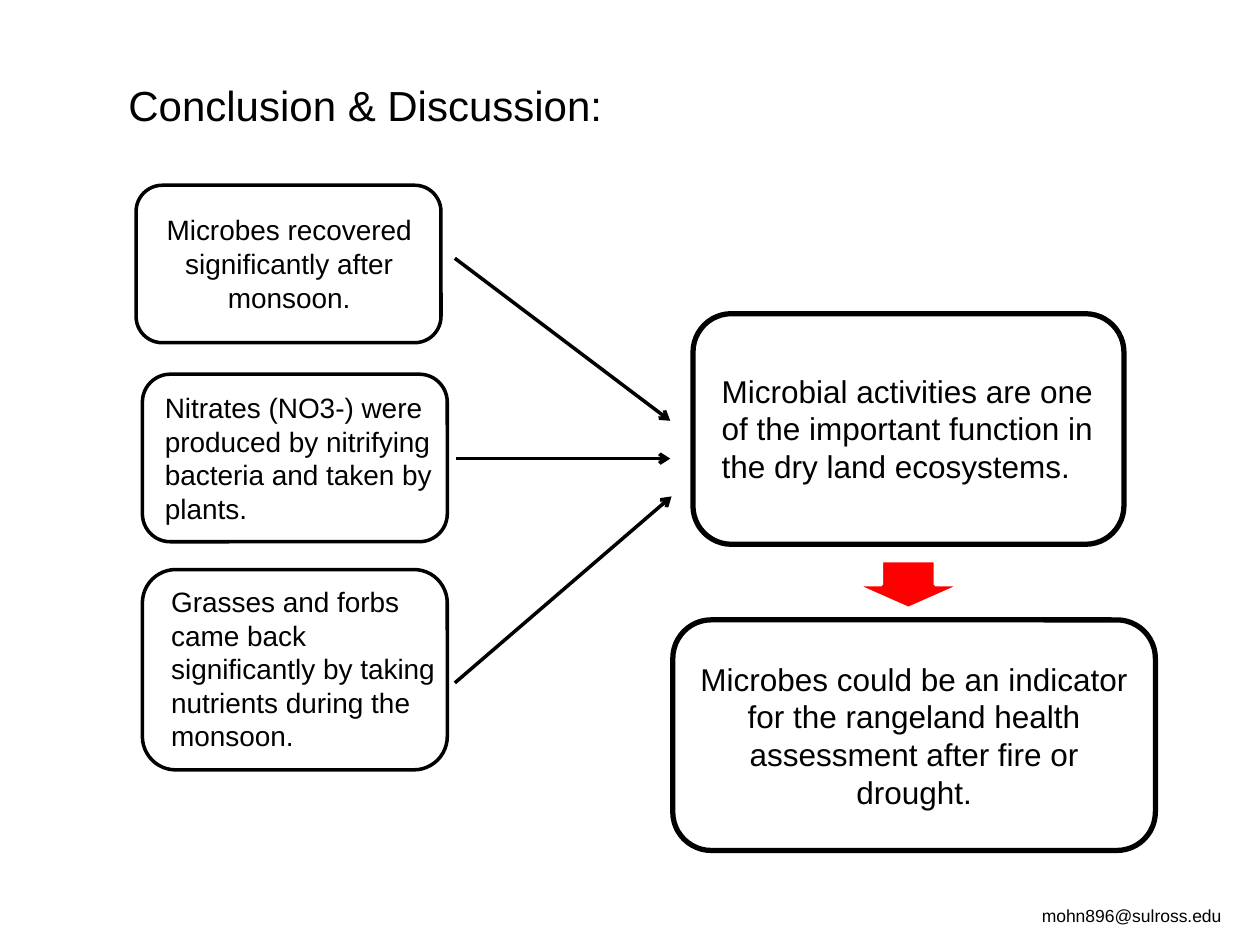
import pptx
import pptx.util
import pptx.dml.color
import pptx.enum.shapes
import pptx.enum.text
import pptx.oxml.ns
from dataclasses import dataclass
from lxml import etree

Inches, Pt = pptx.util.Inches, pptx.util.Pt
RGB = pptx.dml.color.RGBColor
SHAPE = pptx.enum.shapes.MSO_SHAPE
ALIGN = pptx.enum.text.PP_ALIGN
ANCHOR = pptx.enum.text.MSO_ANCHOR
qn = pptx.oxml.ns.qn


@dataclass(frozen=True)
class Theme:
    font: str = "Arial"
    ink: str = "000000"
    paper: str = "FFFFFF"
    accent: str = "FF0000"
    title: int = 24
    finding: int = 16
    outcome: int = 18
    contact: int = 10
    thin: int = 2
    thick: int = 3


T = Theme()

TITLE = ("Conclusion & Discussion:", (0.92, 0.42, 7.92, 0.82))
CONTACT = ("mohn896@sulross.edu", (8.17, 7.13, 1.67, 0.27))

# fmt: box, text area, alignment, text
FINDINGS = [
    ((1.08, 1.47, 2.42, 1.25), (1.17, 1.64, 2.25, 0.91), ALIGN.CENTER,
     "Microbes recovered significantly after monsoon."),
    ((1.13, 2.97, 2.42, 1.33), (1.21, 3.05, 2.33, 1.18), ALIGN.LEFT,
     "Nitrates (NO3-) were produced by nitrifying bacteria and taken by plants."),
    ((1.13, 4.52, 2.42, 1.59), (1.26, 4.59, 2.35, 1.45), ALIGN.LEFT,
     "Grasses and forbs came back significantly by taking nutrients during the monsoon."),
]
ARROWS = [(3.61, 2.05, 5.32, 3.34), (3.62, 3.64, 5.32, 3.64), (3.61, 5.42, 5.33, 3.94)]

FUNCTION_BOX = (5.5, 2.49, 3.42, 1.83)
FUNCTION_AREA = (5.63, 2.9, 3.16, 1.01)
FUNCTION_LINES = ["Microbial activities are one", "of the important function in",
                  "the dry land ecosystems."]
INDICATOR_BOX = (5.34, 4.92, 3.83, 1.83)
INDICATOR = "Microbes could be an indicator for the rangeland health assessment after fire or drought."
DOWN_ARROW = (6.78, 4.45, 0.86, 0.38)


def rgb(value):
    return RGB.from_string(value)


def write(tf, lines, size, align=ALIGN.LEFT, anchor=ANCHOR.TOP):
    tf.word_wrap = True
    tf.vertical_anchor = anchor
    for i, line in enumerate(lines):
        p = tf.add_paragraph() if i else tf.paragraphs[0]
        p.alignment = align
        r = p.add_run()
        r.text = line
        r.font.name, r.font.size = T.font, Pt(size)
        r.font.color.rgb = rgb(T.ink)


def add_text(s, at, lines, size, **layout):
    sp = s.shapes.add_textbox(*map(Inches, at))
    write(sp.text_frame, lines, size, **layout)


def add_shape(s, kind, at, line, width, fill=None):
    sp = s.shapes.add_shape(kind, *map(Inches, at))
    sp.shadow.inherit = False
    if fill:
        sp.fill.solid()
        sp.fill.fore_color.rgb = rgb(fill)
    else:
        sp.fill.background()
    sp.line.color.rgb = rgb(line)
    sp.line.width = Pt(width)
    return sp


def add_arrow(s, ends):
    c = s.shapes.add_connector(pptx.enum.shapes.MSO_CONNECTOR.STRAIGHT, *map(Inches, ends))
    c.line.color.rgb = rgb(T.ink)
    c.line.width = Pt(T.thin)
    etree.SubElement(c.line._get_or_add_ln(), qn("a:tailEnd"), type="arrow")
    etree.SubElement(c._element.spPr, qn("a:effectLst"))


def main():
    """Build the conclusion slide: three findings leading to two outcomes."""
    prs = pptx.Presentation()
    prs.slide_width, prs.slide_height = Inches(10), Inches(7.5)
    s = prs.slides.add_slide(prs.slide_layouts[6])

    add_text(s, TITLE[1], [TITLE[0]], T.title, anchor=ANCHOR.MIDDLE)
    for box, area, align, text in FINDINGS:
        add_shape(s, SHAPE.ROUNDED_RECTANGLE, box, T.ink, T.thin)
        add_text(s, area, [text], T.finding, align=align)
    for ends in ARROWS:
        add_arrow(s, ends)

    add_shape(s, SHAPE.ROUNDED_RECTANGLE, FUNCTION_BOX, T.ink, T.thick)
    add_text(s, FUNCTION_AREA, FUNCTION_LINES, T.outcome)
    sp = add_shape(s, SHAPE.ROUNDED_RECTANGLE, INDICATOR_BOX, T.ink, T.thick, T.paper)
    write(sp.text_frame, [INDICATOR], T.outcome, ALIGN.CENTER, ANCHOR.MIDDLE)
    add_shape(s, SHAPE.DOWN_ARROW, DOWN_ARROW, T.paper, T.thin, T.accent)
    add_text(s, CONTACT[1], [CONTACT[0]], T.contact)
    prs.save("out.pptx")


if __name__ == "__main__":
    main()
